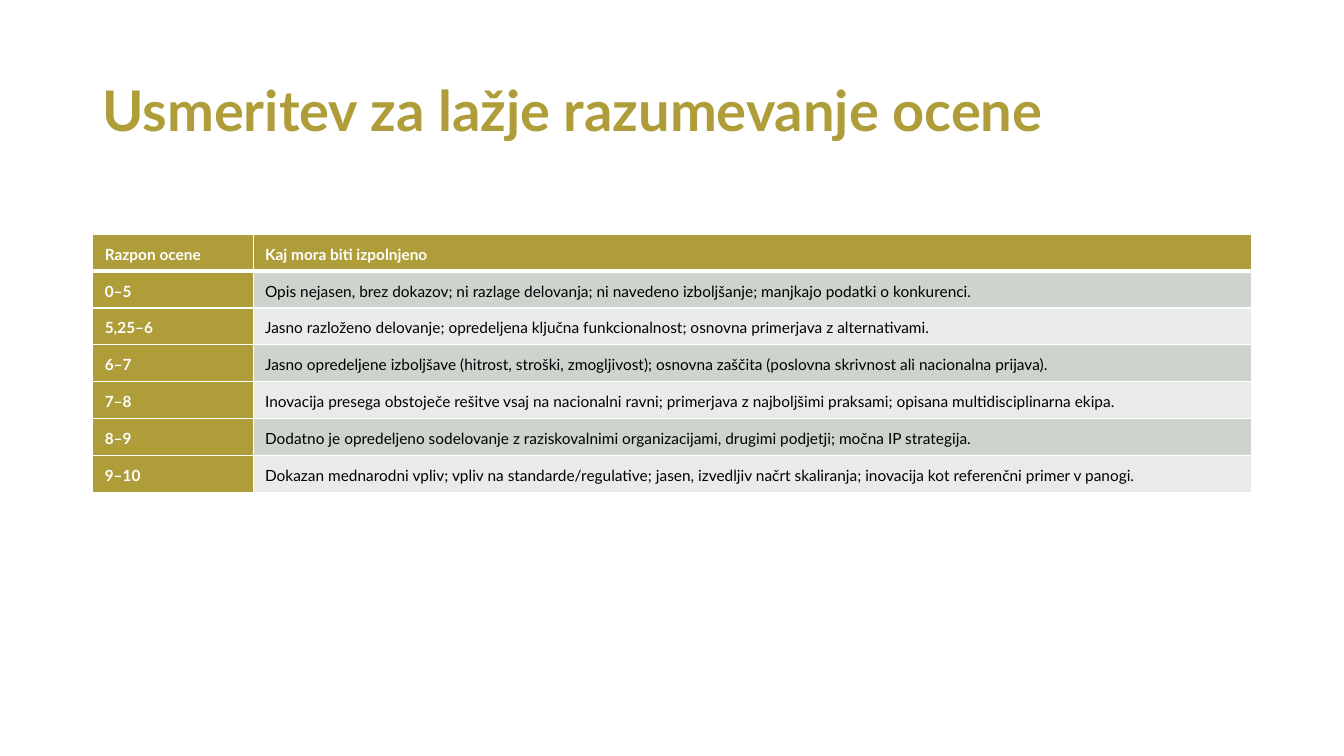
"""Build a slide with a guide to the score ranges."""
from dataclasses import dataclass

from lxml.etree import SubElement
from pptx import Presentation
from pptx.dml.color import RGBColor
from pptx.enum.text import MSO_ANCHOR
from pptx.oxml.ns import qn
from pptx.util import Cm, Pt


@dataclass(frozen=True)
class Theme:
    """Colours, type and line sizes of the slide."""
    font: str = "Lato"
    gold: str = "AE9D39"
    white: str = "FFFFFF"
    black: str = "000000"
    bands: tuple = ("CCD4CD", "E8EBE8")
    title: int = 40
    body: int = 11
    thin: int = 1
    thick: int = 3


THEME = Theme()
TITLE = "Usmeritev za lažje razumevanje ocene"
ROWS = [
    ("Razpon ocene", "Kaj mora biti izpolnjeno"),
    ("0–5", "Opis nejasen, brez dokazov; ni razlage delovanja; ni navedeno izboljšanje; "
            "manjkajo podatki o konkurenci."),
    ("5,25–6", "Jasno razloženo delovanje; opredeljena ključna funkcionalnost; "
               "osnovna primerjava z alternativami."),
    ("6–7", "Jasno opredeljene izboljšave (hitrost, stroški, zmogljivost); "
            "osnovna zaščita (poslovna skrivnost ali nacionalna prijava)."),
    ("7–8", "Inovacija presega obstoječe rešitve vsaj na nacionalni ravni; "
            "primerjava z najboljšimi praksami; opisana multidisciplinarna ekipa."),
    ("8–9", "Dodatno je opredeljeno sodelovanje z raziskovalnimi organizacijami, "
            "drugimi podjetji; močna IP strategija."),
    ("9–10", "Dokazan mednarodni vpliv; vpliv na standarde/regulative; "
             "jasen, izvedljiv načrt skaliranja; inovacija kot referenčni primer v panogi."),
]
WIDTHS = (Cm(4.04), Cm(25.17))
HEIGHT = Cm(0.93)
INSETS = {"margin_left": Cm(0.3), "margin_top": Cm(0.2),
          "margin_right": Cm(0.2), "margin_bottom": Cm(0.18)}
CELL_PARA = {"line_spacing": 1.15, "space_after": Pt(10)}


def put(item, values):
    """Set each named value on an item."""
    for name, value in values.items():
        setattr(item, name, value)


def write(frame, text, size, color, bold, para):
    """Write one styled paragraph into a text frame."""
    line = frame.paragraphs[0]
    put(line, para)
    run = line.add_run()
    run.text = text
    put(run.font, {"name": THEME.font, "size": Pt(size), "bold": bold})
    run.font.color.rgb = RGBColor.from_string(color)


def add_title(slide):
    """Add the slide title."""
    box = slide.shapes.add_textbox(Cm(2.33), Cm(1), Cm(27.9), Cm(3.7))
    put(box.text_frame, {"word_wrap": True, "vertical_anchor": MSO_ANCHOR.MIDDLE})
    write(box.text_frame, TITLE, THEME.title, THEME.gold, True, {"line_spacing": 0.9})


def add_edges(cell, top, bottom):
    """Draw white borders around a cell."""
    props = cell._tc.get_or_add_tcPr()
    edges = {"L": THEME.thin, "R": THEME.thin, "T": top, "B": bottom}
    for side, width in edges.items():
        edge = SubElement(props, qn(f"a:ln{side}"), w=str(Pt(width)))
        fill = SubElement(edge, qn("a:solidFill"))
        SubElement(fill, qn("a:srgbClr"), val=THEME.white)


def fill_cell(cell, text, row, col):
    """Style and fill one cell by its place in the table."""
    label = row == 0 or col == 0
    put(cell, INSETS)
    add_edges(cell, THEME.thick if row == 1 else THEME.thin,
              THEME.thick if row == 0 else THEME.thin)
    cell.fill.solid()
    color = THEME.gold if label else THEME.bands[(row - 1) % 2]
    cell.fill.fore_color.rgb = RGBColor.from_string(color)
    write(cell.text_frame, text, THEME.body,
          THEME.white if label else THEME.black, label, CELL_PARA)


def add_scores(slide):
    """Add the table of score ranges."""
    table = slide.shapes.add_table(len(ROWS), len(WIDTHS), Cm(2.34), Cm(5.9),
                                   sum(WIDTHS), HEIGHT * len(ROWS)).table
    for col, width in enumerate(WIDTHS):
        table.columns[col].width = width
    for row, texts in enumerate(ROWS):
        table.rows[row].height = HEIGHT
        for col, text in enumerate(texts):
            fill_cell(table.cell(row, col), text, row, col)


def main():
    """Build and save the deck."""
    deck = Presentation()
    put(deck, {"slide_width": Cm(33.87), "slide_height": Cm(19.05)})
    slide = deck.slides.add_slide(deck.slide_layouts[6])
    add_title(slide)
    add_scores(slide)
    deck.save("out.pptx")


if __name__ == "__main__":
    main()
